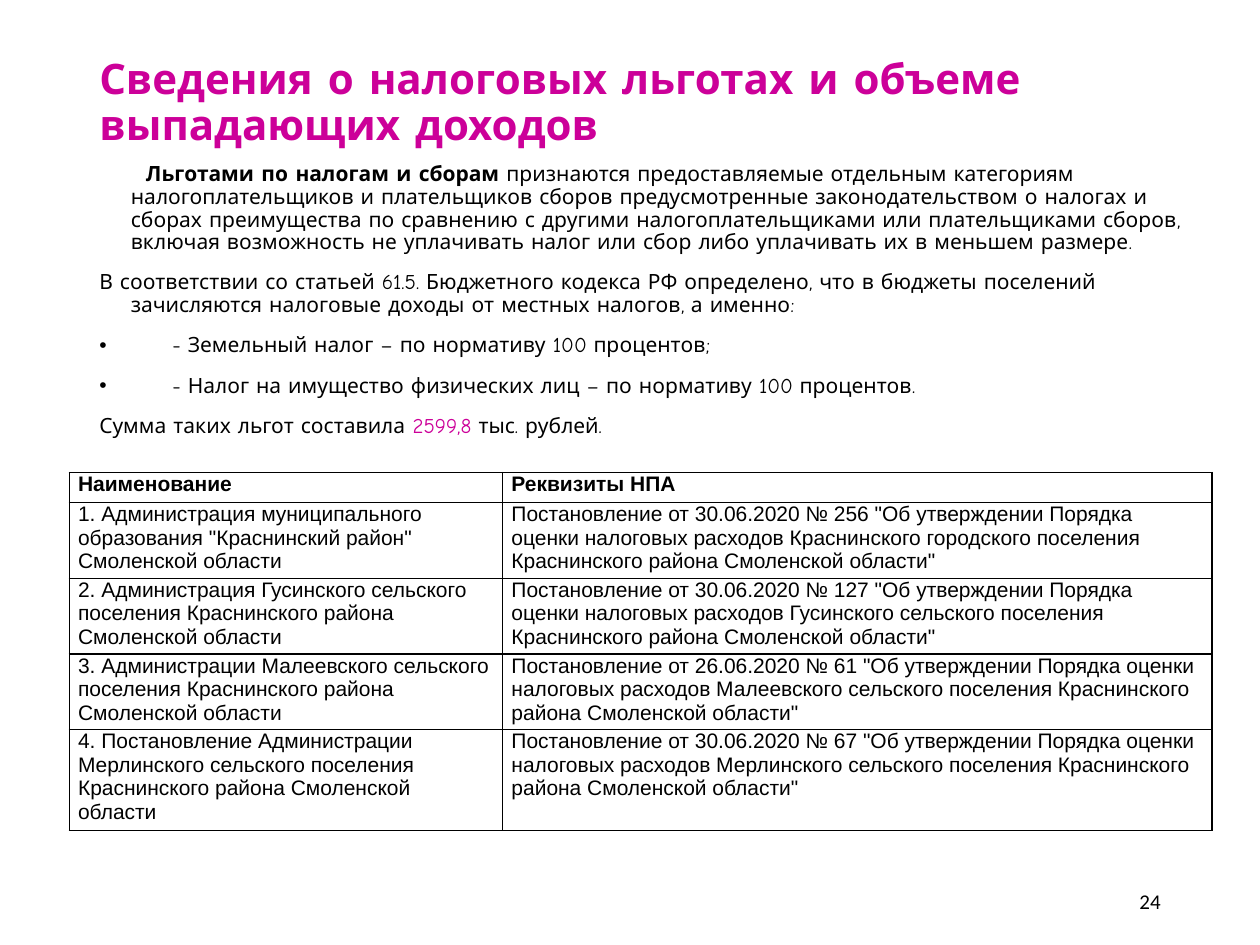
from dataclasses import dataclass

from lxml.etree import SubElement
from pptx import Presentation
from pptx.dml.color import RGBColor
from pptx.enum.text import MSO_ANCHOR, PP_ALIGN
from pptx.oxml.ns import qn
from pptx.util import Inches, Pt


@dataclass(frozen=True)
class Theme:
    ink: RGBColor = RGBColor(0, 0, 0)
    accent: RGBColor = RGBColor(0xCC, 0x00, 0x99)
    border: str = "000000"
    border_width: int = Pt(1)
    display: str = "Comic Neue"
    table: str = "Arial"
    number: str = "Calibri"
    title_size: int = Pt(24)
    text_size: int = Pt(12)


THEME = Theme()

TITLE = "Сведения о налоговых льготах и объеме выпадающих доходов"

# Each paragraph: margin, first-line indent, bullet, runs of (text, format)
BODY = [
    (0.25, 0.12, False, [
        ("Льготами по налогам и сборам", {"bold": True}),
        (" признаются предоставляемые отдельным категориям налогоплательщиков и "
         "плательщиков сборов предусмотренные законодательством о налогах и сборах "
         "преимущества по сравнению с другими налогоплательщиками или плательщиками "
         "сборов, включая возможность не уплачивать налог или сбор либо уплачивать "
         "их в меньшем размере.", {})]),
    (0.25, -0.25, False, [
        ("В соответствии со статьей 61.5. Бюджетного кодекса РФ определено, что в "
         "бюджеты поселений зачисляются налоговые доходы от местных налогов, "
         "а именно:", {})]),
    (0.58, -0.58, True, [("- Земельный налог – по нормативу 100 процентов;", {})]),
    (0.58, -0.58, True, [
        ("- Налог на имущество физических лиц – по нормативу 100 процентов.", {})]),
    (0.25, -0.25, False, [
        ("Сумма таких льгот составила ", {}),
        ("2599,8", {"color": THEME.accent}),
        (" тыс. рублей.", {})]),
]

HEADER = ("Наименование", "Реквизиты НПА")
# Administration, decree date and number, settlement
DECREES = [
    ('Администрация муниципального образования "Краснинский район"',
     "30.06.2020 № 256", "Краснинского городского"),
    ("Администрация Гусинского сельского поселения Краснинского района",
     "30.06.2020 № 127", "Гусинского сельского"),
    ("Администрации Малеевского сельского поселения Краснинского района",
     "26.06.2020 № 61", "Малеевского сельского"),
    ("Постановление Администрации Мерлинского сельского поселения Краснинского района",
     "30.06.2020 № 67", "Мерлинского сельского"),
]
COLUMN_WIDTHS = (3.44, 5.63)
ROW_HEIGHTS = (0.24, 0.6, 0.6, 0.6, 0.61)


def add_run(p, text, name, size=THEME.text_size, color=THEME.ink, bold=False):
    r = p.add_run()
    r.text = text
    for key, value in {"name": name, "size": size, "bold": bold}.items():
        setattr(r.font, key, value)
    r.font.color.rgb = color


def add_text_frame(slide, box, anchor):
    tf = slide.shapes.add_textbox(*map(Inches, box)).text_frame
    tf.word_wrap = True
    tf.vertical_anchor = anchor
    return tf


def add_title(slide, box):
    p = add_text_frame(slide, box, MSO_ANCHOR.MIDDLE).paragraphs[0]
    p.line_spacing = 0.9
    add_run(p, TITLE, THEME.display, THEME.title_size, THEME.accent, True)


def set_indent(p, margin, indent, bullet):
    pPr = p._p.get_or_add_pPr()
    pPr.set("marL", str(Inches(margin)))
    pPr.set("indent", str(Inches(indent)))
    if bullet:
        SubElement(pPr, qn("a:buFont"), typeface=THEME.table)
        SubElement(pPr, qn("a:buChar"), char="•")
    else:
        SubElement(pPr, qn("a:buNone"))


def add_body(slide, box):
    tf = add_text_frame(slide, box, MSO_ANCHOR.TOP)
    for i, (margin, indent, bullet, runs) in enumerate(BODY):
        p = tf.add_paragraph() if i else tf.paragraphs[0]
        set_indent(p, margin, indent, bullet)
        p.line_spacing = 0.9
        p.space_before = Pt(10 if i else 0)
        for text, fmt in runs:
            add_run(p, text, THEME.display, **fmt)


def set_borders(cell):
    tcPr = cell._tc.get_or_add_tcPr()
    for i, side in enumerate(("lnL", "lnR", "lnT", "lnB")):
        ln = tcPr.makeelement(qn(f"a:{side}"), {"w": str(THEME.border_width)})
        fill = SubElement(ln, qn("a:solidFill"))
        SubElement(fill, qn("a:srgbClr"), val=THEME.border)
        tcPr.insert(i, ln)


def fill_cell(cell, text, bold):
    margins = {"margin_left": 0.07, "margin_right": 0.07,
               "margin_top": 0, "margin_bottom": 0}
    for key, value in margins.items():
        setattr(cell, key, Inches(value))
    cell.fill.background()
    set_borders(cell)
    add_run(cell.text_frame.paragraphs[0], text, THEME.table, bold=bold)


def add_decree_table(slide, left, top):
    rows = [HEADER] + [
        (f"{n}. {office} Смоленской области",
         f'Постановление от {decree} "Об утверждении Порядка оценки налоговых расходов '
         f'{settlement} поселения Краснинского района Смоленской области"')
        for n, (office, decree, settlement) in enumerate(DECREES, 1)]
    size = sum(COLUMN_WIDTHS), sum(ROW_HEIGHTS)
    table = slide.shapes.add_table(
        len(rows), len(HEADER), *map(Inches, (left, top, *size))).table
    table.horz_banding = False
    for column, width in zip(table.columns, COLUMN_WIDTHS):
        column.width = Inches(width)
    for i, (row, height, texts) in enumerate(zip(table.rows, ROW_HEIGHTS, rows)):
        row.height = Inches(height)
        for cell, text in zip(row.cells, texts):
            fill_cell(cell, text, bold=i == 0)


def add_page_number(slide, box):
    p = add_text_frame(slide, box, MSO_ANCHOR.MIDDLE).paragraphs[0]
    p.alignment = PP_ALIGN.RIGHT
    add_run(p, "24", THEME.number)


def main():
    prs = Presentation()
    prs.slide_width, prs.slide_height = Inches(10), Inches(7.5)
    slide = prs.slides.add_slide(prs.slide_layouts[6])
    add_title(slide, (0.69, 0.4, 8.62, 0.85))
    add_body(slide, (0.69, 1.25, 8.92, 5.16))
    add_page_number(slide, (7.06, 6.95, 2.25, 0.4))
    add_decree_table(slide, 0.55, 3.75)
    prs.save("out.pptx")


if __name__ == "__main__":
    main()
